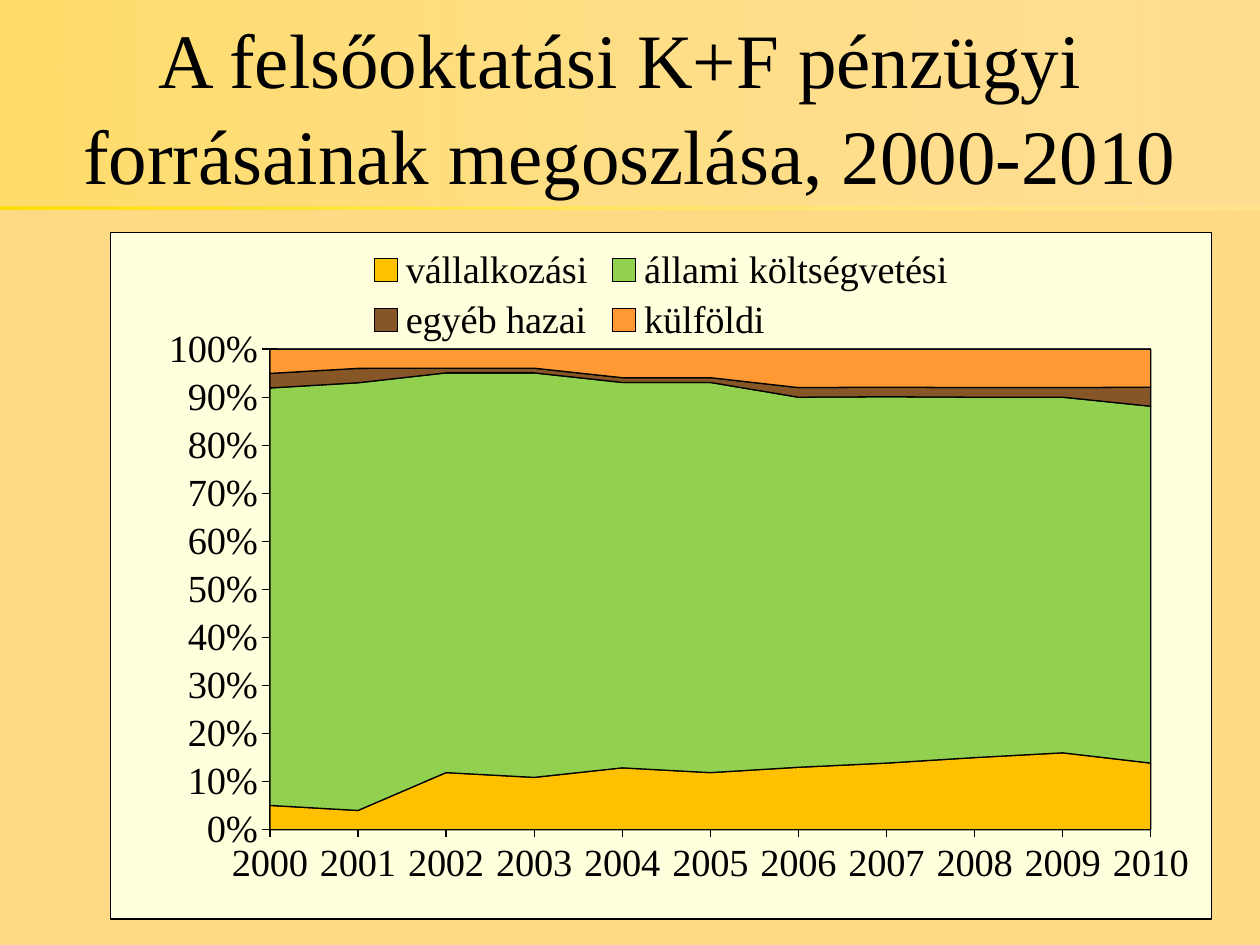
from dataclasses import dataclass

from lxml.etree import SubElement
from pptx import Presentation
from pptx.chart.data import CategoryChartData
from pptx.dml.color import RGBColor
from pptx.enum.chart import XL_CHART_TYPE, XL_LEGEND_POSITION, XL_TICK_MARK
from pptx.enum.shapes import MSO_SHAPE
from pptx.enum.text import MSO_ANCHOR, PP_ALIGN
from pptx.oxml import parse_xml
from pptx.oxml.ns import nsdecls, qn
from pptx.util import Pt

FACE = "Times New Roman"
YEARS = [str(year) for year in range(2000, 2011)]


@dataclass
class Source:
    name: str
    shares: list[int]
    color: str


SOURCES = [
    Source("vállalkozási", [5, 4, 12, 11, 13, 12, 13, 14, 15, 16, 14], "FFC000"),
    Source("állami költségvetési", [86, 89, 84, 85, 81, 82, 77, 77, 75, 74, 75], "92D050"),
    Source("egyéb hazai", [3, 3, 1, 1, 1, 1, 2, 2, 2, 2, 4], "875626"),
    Source("külföldi", [5, 4, 4, 4, 6, 6, 8, 8, 8, 8, 8], "FF9933"),
]


def rgb(code: str) -> RGBColor:
    return RGBColor.from_string(code)


def assign(item, values: dict) -> None:
    for key, value in values.items():
        setattr(item, key, value)


def paint(fill, code: str) -> None:
    fill.solid()
    fill.fore_color.rgb = rgb(code)


def fade(node, share: int) -> None:
    for color in node.iter(qn("a:srgbClr")):
        SubElement(color, qn("a:alpha"), val=str(share * 1000))


def style(font, size: int) -> None:
    assign(font, {"name": FACE, "size": Pt(size), "bold": False})
    font.color.rgb = rgb("000000")


def add_band(slide) -> None:
    band = slide.shapes.add_shape(MSO_SHAPE.RECTANGLE, 0, 0, Pt(720), Pt(120))
    band.shadow.inherit = False
    band.line.fill.background()
    band.fill.gradient()
    band.fill.gradient_angle = 0
    stops = band.fill.gradient_stops
    for stop, place, code in zip(stops, (0, 1), ("FEE002", "FFFF99")):
        stop.position = place
        stop.color.rgb = rgb(code)
    fade(band._element.spPr.findall(".//" + qn("a:gs"))[-1], 30)


def add_title(slide, text: str) -> None:
    box = slide.shapes.add_textbox(0, 0, Pt(720), Pt(118))
    paint(box.fill, "FFDB95")
    fade(box._element.spPr, 71)
    frame = box.text_frame
    assign(frame, {"word_wrap": True, "vertical_anchor": MSO_ANCHOR.BOTTOM})
    para = frame.paragraphs[0]
    assign(para, {"text": text, "alignment": PP_ALIGN.CENTER, "line_spacing": 1.04})
    for run in para.runs:
        style(run.font, 44)


def place_plot(chart, **spots: float) -> None:
    area = chart._chartSpace.chart.plotArea
    for old in area.findall(qn("c:layout")):
        area.remove(old)
    marks = {"layoutTarget": "inner", "xMode": "edge", "yMode": "edge", **spots}
    rows = "".join(f'<c:{key} val="{value}"/>' for key, value in marks.items())
    area.insert(0, parse_xml(
        f'<c:layout {nsdecls("c")}><c:manualLayout>{rows}</c:manualLayout></c:layout>'))


def frame_chart(chart, fill: str, line: str) -> None:
    solid = '<a:solidFill><a:srgbClr val="{}"/></a:solidFill>'
    chart._chartSpace.chart.addnext(parse_xml(
        f'<c:spPr {nsdecls("c", "a")}>{solid.format(fill)}'
        f'<a:ln w="{Pt(0.75)}">{solid.format(line)}</a:ln></c:spPr>'))


def add_areas(slide, sources: list[Source]) -> None:
    data = CategoryChartData()
    data.categories = YEARS
    for source in sources:
        data.add_series(source.name, source.shares)
    chart = slide.shapes.add_chart(
        XL_CHART_TYPE.AREA_STACKED_100, Pt(62.64), Pt(132.48), Pt(630), Pt(393.12), data).chart
    style(chart.font, 22)
    assign(chart, {"has_title": False, "has_legend": True})
    assign(chart.legend, {"position": XL_LEGEND_POSITION.TOP, "include_in_layout": False})
    for series, source in zip(chart.plots[0].series, sources):
        paint(series.format.fill, source.color)
        paint(series.format.line.fill, "000000")
        series.format.line.width = Pt(0.75)
    ticks = {"major_tick_mark": XL_TICK_MARK.CROSS, "minor_tick_mark": XL_TICK_MARK.NONE}
    for axis, grid in ((chart.category_axis, False), (chart.value_axis, True)):
        assign(axis, {**ticks, "has_major_gridlines": grid})
        paint(axis.format.line.fill, "000000")
    scale = chart.value_axis
    assign(scale, {"minimum_scale": 0, "maximum_scale": 1, "major_unit": 0.1})
    assign(scale.tick_labels, {"number_format": "0%", "number_format_is_linked": False})
    scale._element.find(qn("c:crossBetween")).set("val", "midCat")
    place_plot(chart, x=0.145, y=0.17, w=0.8, h=0.7)
    frame_chart(chart, "FFFFDD", "000000")


def main() -> None:
    """Build the slide on the funding of higher education research."""
    deck = Presentation()
    assign(deck, {"slide_width": Pt(720), "slide_height": Pt(540)})
    slide = deck.slides.add_slide(deck.slide_layouts[6])
    paint(slide.background.fill, "FFDA84")
    add_band(slide)
    add_title(slide, "A felsőoktatási K+F pénzügyi \vforrásainak megoszlása, 2000-2010")
    add_areas(slide, SOURCES)
    deck.save("out.pptx")


if __name__ == "__main__":
    main()
